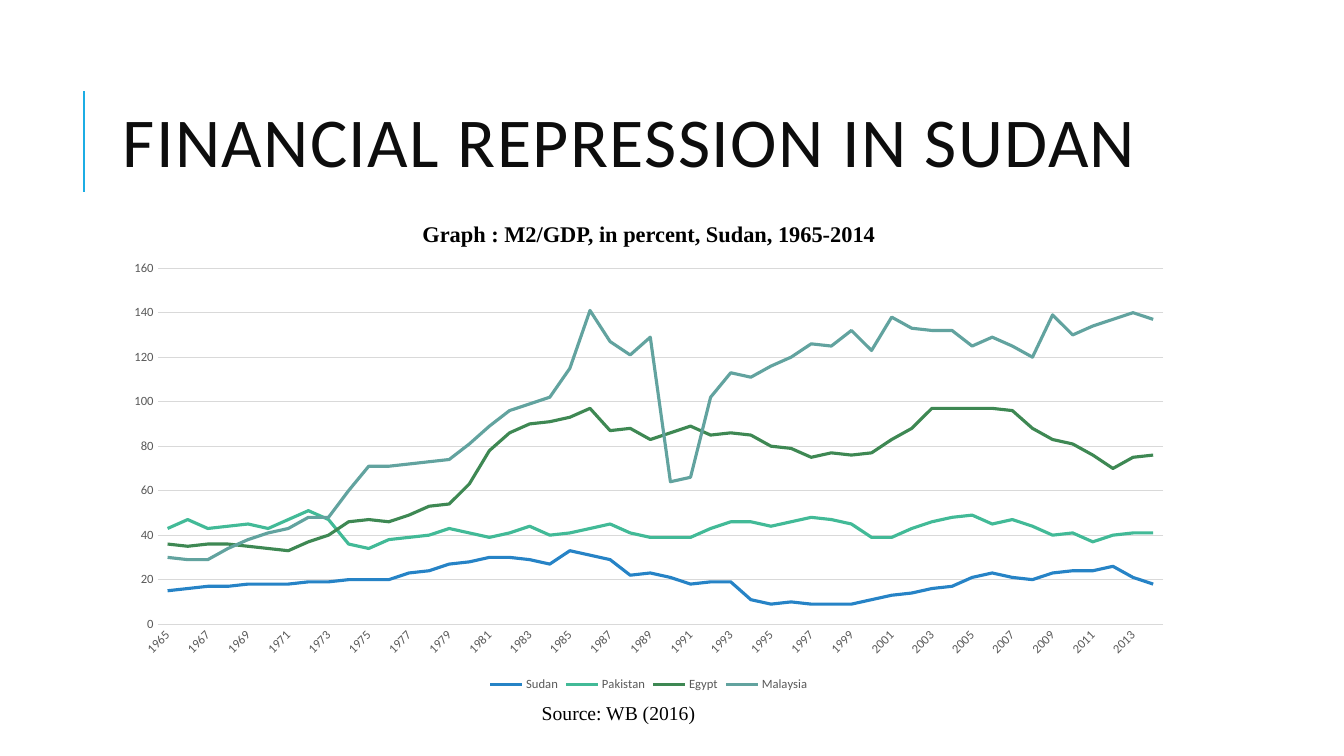
"""Build a slide charting M2/GDP for Sudan and three other countries."""
from lxml import etree
from pptx import Presentation
from pptx import util as u
from pptx.chart.data import CategoryChartData
from pptx.dml.color import RGBColor
from pptx.enum import chart as ch, shapes, text
from pptx.oxml.ns import qn

PX = 9144
SANS, SERIF = "Calibri", "Times New Roman"
BLACK = RGBColor(0x00, 0x00, 0x00)
INK = RGBColor(0x0D, 0x0D, 0x0D)
GREY = RGBColor(0x59, 0x59, 0x59)
GRID = RGBColor(0xD9, 0xD9, 0xD9)
ACCENT = RGBColor(0x1C, 0xAD, 0xE4)
BLUE = RGBColor(0x26, 0x83, 0xC6)
MINT = RGBColor(0x42, 0xBA, 0x97)
GREEN = RGBColor(0x3E, 0x88, 0x53)
TEAL = RGBColor(0x62, 0xA3, 0x9F)

YEARS = [str(year) for year in range(1965, 2015)]
COUNTRIES = [
    ("Sudan", BLUE, (
        15, 16, 17, 17, 18, 18, 18, 19, 19, 20, 20, 20, 23, 24, 27, 28, 30,
        30, 29, 27, 33, 31, 29, 22, 23, 21, 18, 19, 19, 11, 9, 10, 9, 9, 9,
        11, 13, 14, 16, 17, 21, 23, 21, 20, 23, 24, 24, 26, 21, 18)),
    ("Pakistan", MINT, (
        43, 47, 43, 44, 45, 43, 47, 51, 47, 36, 34, 38, 39, 40, 43, 41, 39,
        41, 44, 40, 41, 43, 45, 41, 39, 39, 39, 43, 46, 46, 44, 46, 48, 47,
        45, 39, 39, 43, 46, 48, 49, 45, 47, 44, 40, 41, 37, 40, 41, 41)),
    ("Egypt", GREEN, (
        36, 35, 36, 36, 35, 34, 33, 37, 40, 46, 47, 46, 49, 53, 54, 63, 78,
        86, 90, 91, 93, 97, 87, 88, 83, 86, 89, 85, 86, 85, 80, 79, 75, 77,
        76, 77, 83, 88, 97, 97, 97, 97, 96, 88, 83, 81, 76, 70, 75, 76)),
    ("Malaysia", TEAL, (
        30, 29, 29, 34, 38, 41, 43, 48, 48, 60, 71, 71, 72, 73, 74, 81, 89,
        96, 99, 102, 115, 141, 127, 121, 129, 64, 66, 102, 113, 111, 116,
        120, 126, 125, 132, 123, 138, 133, 132, 132, 125, 129, 125, 120,
        139, 130, 134, 137, 140, 137)),
]


def px(*lengths):
    """Turn px lengths into EMU."""
    return [u.Emu(n * PX) for n in lengths]


def style_font(font, name, size, color, bold=False):
    """Set the face, size, colour and weight of a font."""
    font.name, font.size, font.bold = name, u.Pt(size), bold
    font.color.rgb = color


def style_line(line, color, width):
    """Set the colour and width of a line."""
    line.color.rgb = color
    line.width = u.Pt(width)


def add_text(s, box, words, name, size, color, bold=False,
             align=text.PP_ALIGN.CENTER, anchor=text.MSO_ANCHOR.TOP):
    """Add a one-run text box and return its paragraph and run."""
    tf = s.shapes.add_textbox(*px(*box)).text_frame
    tf.word_wrap = True
    tf.vertical_anchor = anchor
    p = tf.paragraphs[0]
    p.alignment = align
    r = p.add_run()
    r.text = words
    style_font(r.font, name, size, color, bold)
    return p, r


def add_rule(s, ends):
    """Add the accent line beside the title."""
    line = s.shapes.add_connector(shapes.MSO_CONNECTOR.STRAIGHT, *px(*ends))
    style_line(line.line, ACCENT, 1.5)
    etree.SubElement(line._element.spPr, qn("a:effectLst"))


def style_axes(chart):
    """Style both axes, slanting every second year label."""
    years, values = chart.category_axis, chart.value_axis
    for axis in (years, values):
        axis.major_tick_mark = axis.minor_tick_mark = ch.XL_TICK_MARK.NONE
        style_font(axis.tick_labels.font, SANS, 9, GREY)
    style_line(years.format.line, GRID, 0.75)
    years._element.find(qn("c:txPr")).find(qn("a:bodyPr")).set("rot", "-2700000")
    skip = etree.Element(qn("c:tickLblSkip"), val="2")
    years._element.find(qn("c:noMultiLvlLbl")).addprevious(skip)
    values.minimum_scale, values.maximum_scale, values.major_unit = 0, 160, 20
    values.format.line.fill.background()
    values.tick_labels.number_format = "0"
    values.tick_labels.number_format_is_linked = False
    style_line(values.major_gridlines.format.line, GRID, 0.75)


def add_line_chart(s, box):
    """Add the line chart with one line per country."""
    data = CategoryChartData(number_format="0")
    data.categories = YEARS
    for name, _, shares in COUNTRIES:
        data.add_series(name, shares)
    chart = s.shapes.add_chart(ch.XL_CHART_TYPE.LINE, *px(*box), data).chart
    style_font(chart.font, SANS, 10, BLACK)
    chart.has_title = False
    chart.has_legend = True
    chart.legend.position = ch.XL_LEGEND_POSITION.BOTTOM
    chart.legend.include_in_layout = False
    style_font(chart.legend.font, SANS, 9, GREY)
    plot = chart.plots[0]
    plot.vary_by_categories = False
    for series, (_, color, _) in zip(plot.series, COUNTRIES):
        series.smooth = False
        series.marker.style = ch.XL_MARKER_STYLE.NONE
        style_line(series.format.line, color, 2.25)
    style_axes(chart)


def main():
    """Build and save the slide."""
    prs = Presentation()
    prs.slide_width, prs.slide_height = px(1333, 750)
    s = prs.slides.add_slide(prs.slide_layouts[6])
    add_rule(s, (83, 190, 83, 90))
    p, r = add_text(s, (112, 64, 1063, 164), "FINANCIAL REPRESSION IN SUDAN",
                    SANS, 50, INK, align=text.PP_ALIGN.LEFT,
                    anchor=text.MSO_ANCHOR.MIDDLE)
    p.line_spacing = 0.8
    r.font._element.set("spc", "100")
    p, r = add_text(s, (146, 200, 995, 46),
                    "Graph : M2/GDP, in percent, Sudan, 1965-2014",
                    SERIF, 16, BLACK, bold=True)
    p.line_spacing = 1.5
    p.space_before = p.space_after = u.Pt(6)
    add_line_chart(s, (112, 250, 1063, 440))
    add_text(s, (427, 690, 373, 64), "Source: WB (2016)", SERIF, 14, BLACK)
    prs.save("out.pptx")


if __name__ == "__main__":
    main()
